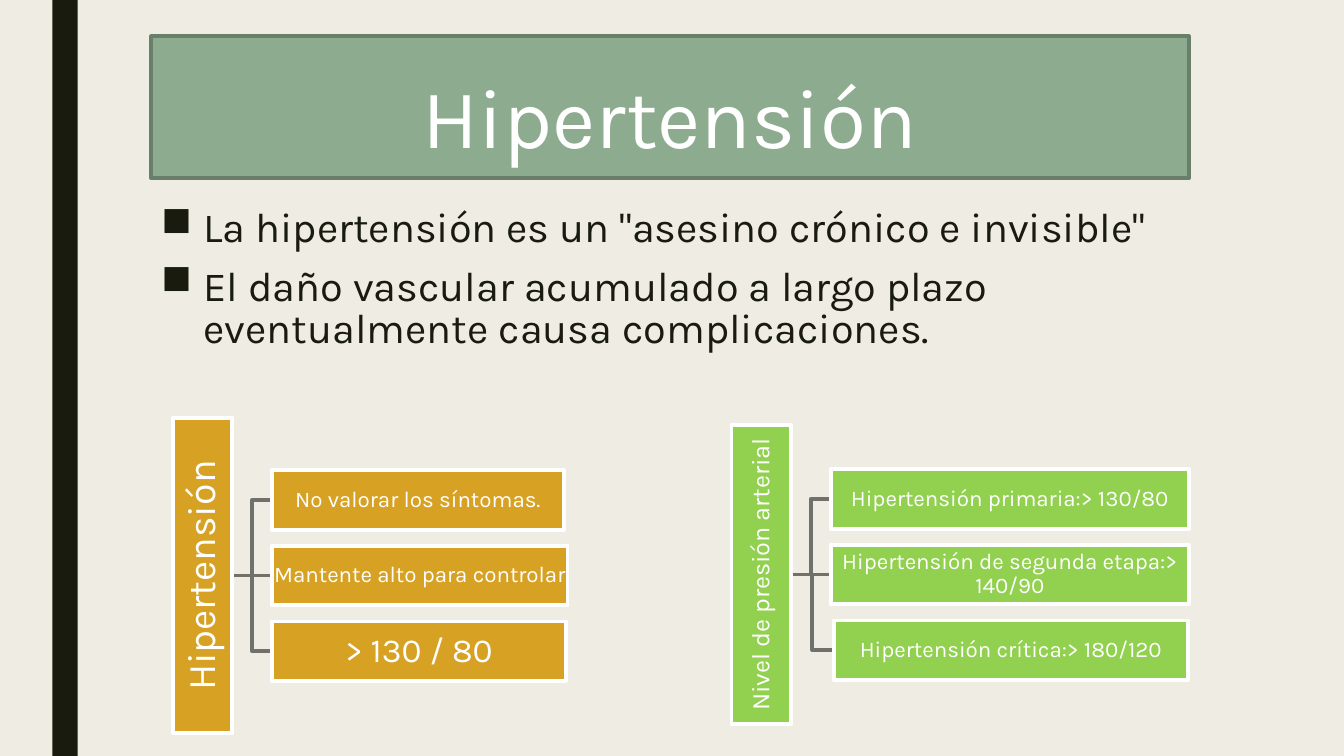
import dataclasses

import lxml.etree
import pptx
import pptx.dml.color
import pptx.enum.shapes
import pptx.enum.text
import pptx.oxml.ns
import pptx.util

Inches = pptx.util.Inches
Pt = pptx.util.Pt
ALIGN = pptx.enum.text.PP_ALIGN
ANCHOR = pptx.enum.text.MSO_ANCHOR
SHAPE = pptx.enum.shapes.MSO_SHAPE
CONNECTOR = pptx.enum.shapes.MSO_CONNECTOR
qn = pptx.oxml.ns.qn


@dataclasses.dataclass(frozen=True)
class Theme:
    font: str = "Karla"
    background: str = "EFEDE3"
    dark: str = "191B0E"
    white: str = "FFFFFF"
    sage: str = "8DAB8E"
    sage_edge: str = "687F69"
    gold: str = "D7A124"
    green: str = "92D050"
    connector: str = "70716B"
    title_size: float = 60
    body_size: float = 29.6
    large_size: float = 28
    value_size: float = 24
    root_size: float = 18
    item_size: float = 16
    line_width: float = 2.75


THEME = Theme()
BOX_HEIGHT = 0.59
ROW_PITCH = 0.75


def rgb(value):
    return pptx.dml.color.RGBColor.from_string(value)


def apply_format(target, values):
    for name, value in values.items():
        setattr(target, name, value)


def place(shape, left, top, width, height):
    apply_format(shape, {
        "left": Inches(left), "top": Inches(top),
        "width": Inches(width), "height": Inches(height),
    })


def paint(shape, fill, line=None):
    shape.fill.solid()
    shape.fill.fore_color.rgb = rgb(fill)
    if line is None:
        shape.line.fill.background()
    else:
        shape.line.color.rgb = rgb(line)
        shape.line.width = Pt(THEME.line_width)


def set_frame(frame, anchor, insets):
    left, top, right, bottom = (Inches(inset) for inset in insets)
    apply_format(frame, {
        "word_wrap": True, "auto_size": pptx.enum.text.MSO_AUTO_SIZE.NONE,
        "vertical_anchor": anchor, "margin_left": left, "margin_top": top,
        "margin_right": right, "margin_bottom": bottom,
    })


def write(paragraph, text, size, color, **paragraph_format):
    apply_format(paragraph, paragraph_format)
    run = paragraph.add_run()
    run.text = text
    apply_format(run.font, {"name": THEME.font, "size": Pt(size)})
    run.font.color.rgb = rgb(color)


def add_box(slide, bounds, fill, line=None):
    shape = slide.shapes.add_shape(
        SHAPE.RECTANGLE, *(Inches(length) for length in bounds))
    shape.shadow.inherit = False
    paint(shape, fill, line)
    return shape


def add_label(slide, bounds, fill, text, size, rotation=0):
    shape = add_box(slide, bounds, fill, THEME.white)
    shape.rotation = rotation
    set_frame(shape.text_frame, ANCHOR.MIDDLE, [0.01] * 4)
    write(shape.text_frame.paragraphs[0], text, size, THEME.white,
          alignment=ALIGN.CENTER, line_spacing=0.9)


def add_link(slide, start, end):
    kind = CONNECTOR.STRAIGHT if start[1] == end[1] else CONNECTOR.ELBOW
    link = slide.shapes.add_connector(
        kind, *(Inches(length) for length in (*start, *end)))
    link.line.color.rgb = rgb(THEME.connector)
    link.line.width = Pt(THEME.line_width)
    lxml.etree.SubElement(link._element.spPr, qn("a:effectLst"))


def add_title(slide, text):
    title = slide.shapes.title
    place(title, 1.5, 0.36, 10.29, 1.41)
    paint(title, THEME.sage, THEME.sage_edge)
    set_frame(title.text_frame, ANCHOR.MIDDLE, (0.1, 0.34, 0.1, 0.05))
    write(title.text_frame.paragraphs[0], text, THEME.title_size, THEME.white,
          alignment=ALIGN.CENTER, line_spacing=0.89)


def add_bullets(slide, texts):
    box = slide.shapes.add_textbox(
        Inches(1.5), Inches(2.03), Inches(10.2), Inches(1.64))
    frame = box.text_frame
    set_frame(frame, ANCHOR.TOP, (0.1, 0.05, 0.1, 0.05))
    for index, text in enumerate(texts):
        paragraph = frame.add_paragraph() if index else frame.paragraphs[0]
        write(paragraph, text, THEME.body_size, THEME.dark,
              line_spacing=0.84, space_before=Pt(10), space_after=Pt(2))
        properties = paragraph._p.get_or_add_pPr()
        properties.set("marL", str(Inches(0.42)))
        properties.set("indent", str(-Inches(0.42)))
        lxml.etree.SubElement(properties, qn("a:buChar")).set("char", "■")


def add_hierarchy(slide, fill, center, root, items):
    center_x, center_y = center
    root_text, root_size, root_length = root
    start = (center_x + BOX_HEIGHT / 2, center_y)
    rows = [center_y + (index - 1) * ROW_PITCH for index in range(len(items))]
    for row, item in zip(rows, items):
        add_link(slide, start, (item[0], row))
    add_label(slide, (center_x - root_length / 2, center_y - BOX_HEIGHT / 2,
                      root_length, BOX_HEIGHT),
              fill, root_text, root_size, 270)
    for row, (left, width, text, size) in zip(rows, items):
        add_label(slide, (left, row - BOX_HEIGHT / 2, width, BOX_HEIGHT),
                  fill, text, size)


def main():
    presentation = pptx.Presentation()
    apply_format(presentation, {
        "slide_width": Inches(13.33), "slide_height": Inches(7.5)})
    slide = presentation.slides.add_slide(presentation.slide_layouts[5])
    slide.background.fill.solid()
    slide.background.fill.fore_color.rgb = rgb(THEME.background)

    add_box(slide, (0.52, 0, 0.25, 7.5), THEME.dark)
    add_title(slide, "Hipertensión")
    add_bullets(slide, [
        'La hipertensión es un "asesino crónico e invisible"',
        "El daño vascular acumulado a largo plazo eventualmente causa "
        "complicaciones.",
    ])
    add_hierarchy(
        slide, THEME.gold, (2.01, 5.71),
        ("Hipertensión", THEME.large_size, 3.13), [
            (2.7, 2.89, "No valorar los síntomas.", THEME.item_size),
            (2.7, 2.93, "Mantente alto para controlar", THEME.item_size),
            (2.7, 2.91, "> 130 / 80", THEME.value_size),
        ])
    add_hierarchy(
        slide, THEME.green, (7.55, 5.7),
        ("Nivel de presión arterial", THEME.root_size, 2.97), [
            (8.24, 3.55, "Hipertensión primaria:> 130/80", THEME.item_size),
            (8.24, 3.55, "Hipertensión de segunda etapa:> 140/90",
             THEME.item_size),
            (8.27, 3.51, "Hipertensión crítica:> 180/120", THEME.item_size),
        ])
    presentation.save("out.pptx")


if __name__ == "__main__":
    main()
